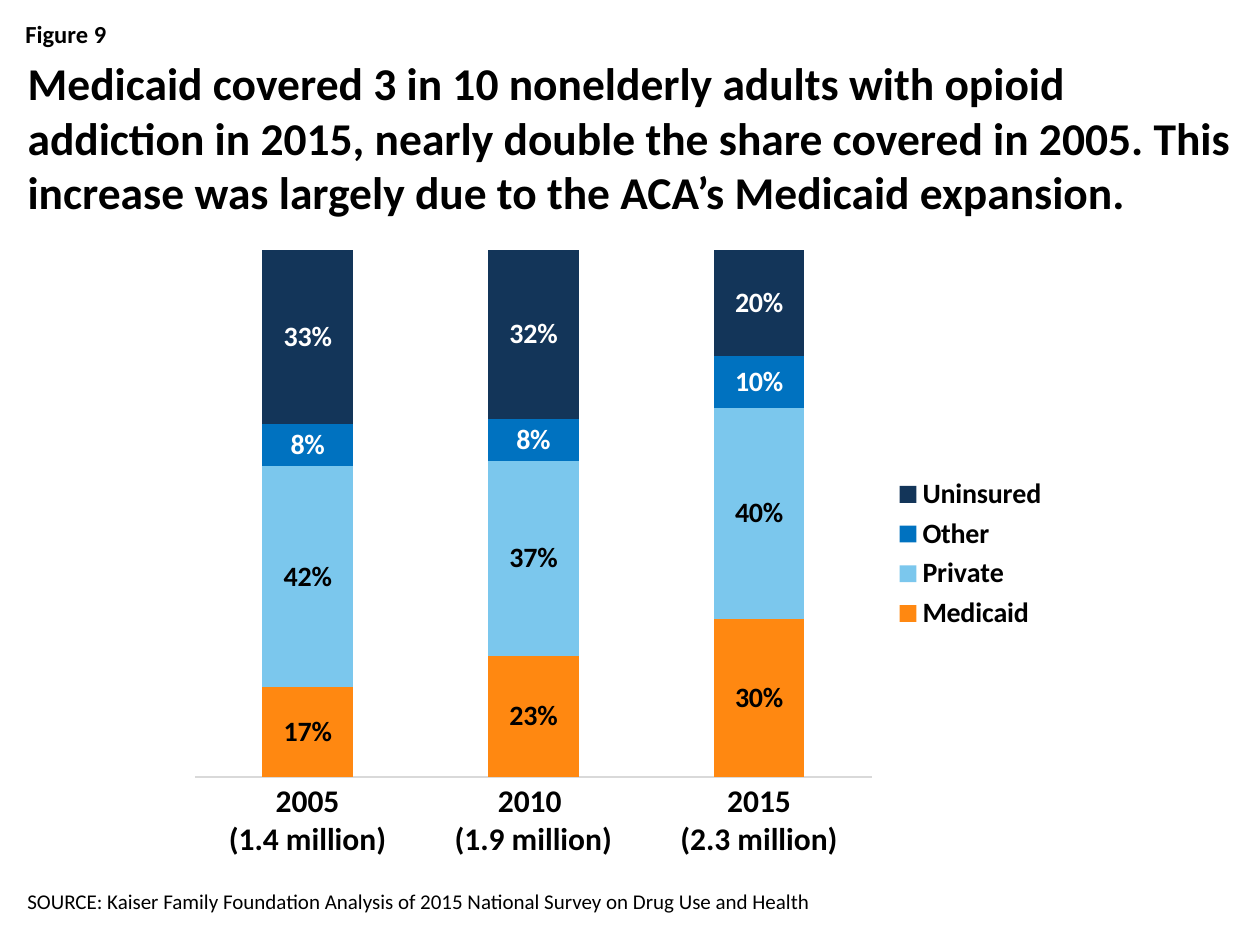
from pptx import Presentation
from pptx import util as u
from pptx.chart.data import CategoryChartData
from pptx.dml.color import RGBColor
from pptx.enum import chart as charts, text
from pptx.oxml import parse_xml
from pptx.oxml.ns import nsdecls

PX_PER_INCH = 126
FONT = "Calibri"
BLACK, WHITE, AXIS_GREY = "000000", "FFFFFF", "D9D9D9"

CATEGORIES = ["2005\n(1.4 million)", "2010 \n(1.9 million)", "2015\n(2.3 million)"]
# name, shares, fill, label colour
SERIES = [
    ("Medicaid", (0.17, 0.23, 0.30), "FF8811", BLACK),
    ("Private", (0.42, 0.37, 0.40), "7BC7ED", BLACK),
    ("Other", (0.08, 0.08, 0.10), "0072C0", WHITE),
    ("Uninsured", (0.33, 0.32, 0.20), "133559", WHITE),
]


def px(length):
    return u.Emu(round(length * 914400 / PX_PER_INCH))


def color(hex_string):
    return RGBColor.from_string(hex_string)


def set_attributes(target, values):
    for name, value in values.items():
        setattr(target, name, value)


def set_font(font, size, bold=False, hex_string=BLACK):
    set_attributes(font, {"name": FONT, "size": u.Pt(size), "bold": bold})
    font.color.rgb = color(hex_string)


def write_text(shape, box, words, size, bold=False, anchor=text.MSO_ANCHOR.TOP):
    """Place a shape in its box and fill it with one left-aligned paragraph."""
    set_attributes(shape, dict(zip(("left", "top", "width", "height"), map(px, box))))
    set_attributes(shape.text_frame, {
        "text": words,
        "word_wrap": True,
        "auto_size": text.MSO_AUTO_SIZE.NONE,
        "vertical_anchor": anchor,
    })
    paragraph = shape.text_frame.paragraphs[0]
    paragraph.alignment = text.PP_ALIGN.LEFT
    set_font(paragraph.runs[0].font, size, bold)


def add_text(slide, box, *details, **options):
    write_text(slide.shapes.add_textbox(0, 0, 0, 0), box, *details, **options)


def place_plot(chart, box, plot_box):
    """Fix the inner plot area, given in px within the chart's box."""
    _, _, width, height = box
    left, top, plot_width, plot_height = plot_box
    fractions = {"x": left / width, "y": top / height,
                 "w": plot_width / width, "h": plot_height / height}
    values = "".join(f'<c:{key} val="{value:.3f}"/>' for key, value in fractions.items())
    layout = parse_xml(
        f'<c:layout {nsdecls("c")}><c:manualLayout><c:layoutTarget val="inner"/>'
        f'<c:xMode val="edge"/><c:yMode val="edge"/>{values}</c:manualLayout></c:layout>')
    plot_area = chart.plots[0]._element.getparent()
    for old_layout in plot_area.findall(layout.tag):
        plot_area.remove(old_layout)
    plot_area.insert(0, layout)


def add_coverage_chart(slide, box):
    data = CategoryChartData(number_format="0%")
    data.categories = CATEGORIES
    for name, shares, _, _ in SERIES:
        data.add_series(name, shares)
    chart = slide.shapes.add_chart(
        charts.XL_CHART_TYPE.COLUMN_STACKED_100, *map(px, box), data).chart
    chart.has_title = False
    set_font(chart.font, 10)
    place_plot(chart, box, (17, 13, 677, 527))

    # Columns and their labels
    plot = chart.plots[0]
    set_attributes(plot, {"gap_width": 150, "overlap": 100, "vary_by_categories": False})
    for series, (_, _, fill, label_color) in zip(plot.series, SERIES):
        series.format.fill.solid()
        series.format.fill.fore_color.rgb = color(fill)
        labels = series.data_labels
        set_attributes(labels, {"show_value": True, "number_format": "0%",
                                "number_format_is_linked": False})
        set_font(labels.font, 16, True, label_color)

    # Axes
    set_attributes(chart.value_axis, {"visible": False, "has_major_gridlines": False})
    axis = chart.category_axis
    set_attributes(axis, {"major_tick_mark": charts.XL_TICK_MARK.NONE,
                          "minor_tick_mark": charts.XL_TICK_MARK.NONE})
    set_font(axis.tick_labels.font, 18, True)
    axis.format.line.color.rgb = color(AXIS_GREY)
    axis.format.line.width = u.Pt(0.75)

    # Legend
    chart.has_legend = True
    set_attributes(chart.legend, {"position": charts.XL_LEGEND_POSITION.RIGHT,
                                  "include_in_layout": False})
    set_font(chart.legend.font, 16, True)


def main():
    presentation = Presentation()
    presentation.slide_width, presentation.slide_height = px(1260), px(945)
    slide = presentation.slides.add_slide(presentation.slide_layouts[5])

    # Heading
    add_text(slide, (13, 13, 1235, 43), "Figure 9", 14, bold=True)
    write_text(
        slide.shapes.title, (15, 49, 1235, 126),
        "Medicaid covered 3 in 10 nonelderly adults with opioid addiction in 2015, "
        "nearly double the share covered in 2005. This increase was largely due to "
        "the ACA’s Medicaid expansion.", 26, bold=True)

    # Chart and source line
    add_coverage_chart(slide, (178, 237, 883, 634))
    add_text(
        slide, (15, 823, 1131, 97),
        "SOURCE: Kaiser Family Foundation Analysis of 2015 National Survey on "
        "Drug Use and Health", 12, anchor=text.MSO_ANCHOR.BOTTOM)

    presentation.save("out.pptx")


if __name__ == "__main__":
    main()
